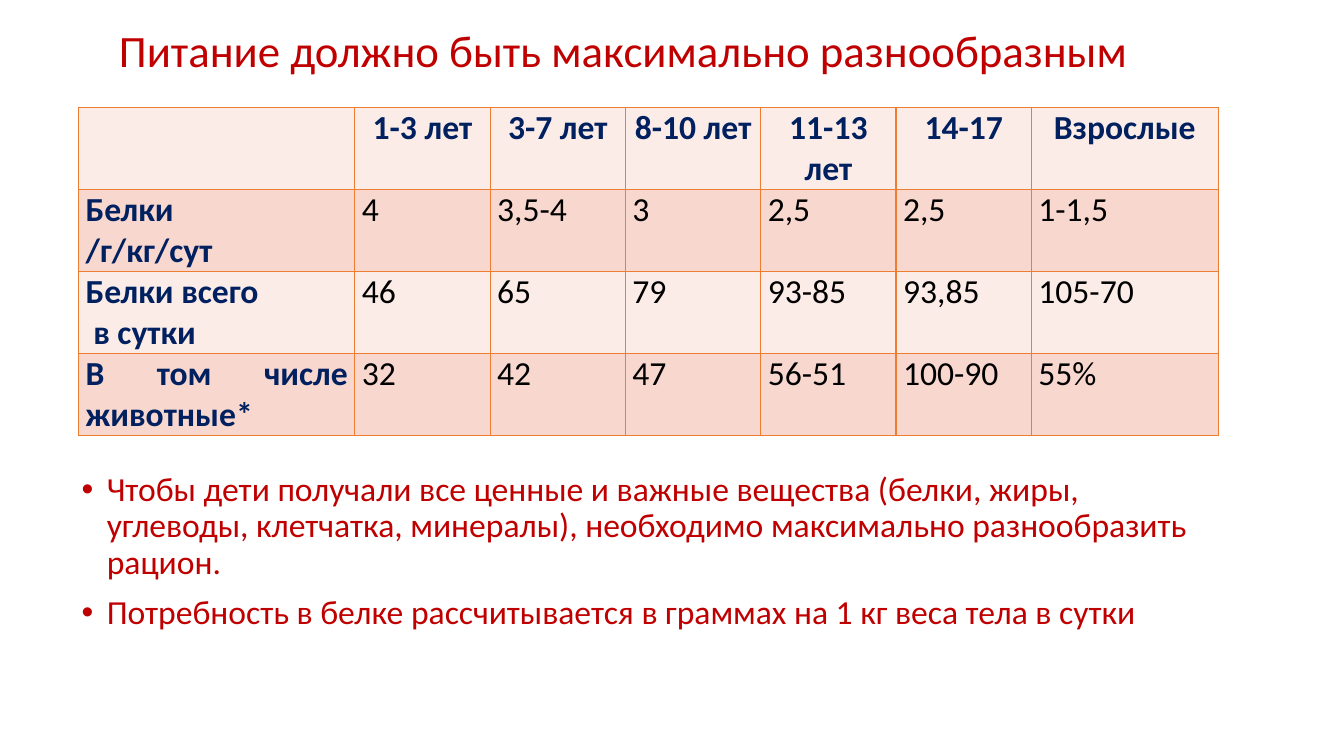
from lxml.etree import SubElement
from pptx import Presentation
from pptx.dml.color import RGBColor
from pptx.enum.text import MSO_ANCHOR as Anchor, MSO_AUTO_SIZE as AutoSize, PP_ALIGN as Align
from pptx.oxml.ns import qn
from pptx.util import Inches, Pt

RED, NAVY, BLACK, ORANGE = "C00000", "002060", "000000", "ED7D31"
BANDS = ("FCECE8", "F8D7CE")

TITLE = "Питание должно быть максимально разнообразным"
PROTEIN_NORMS = [
    ["", "1-3 лет", "3-7 лет", "8-10 лет", "11-13 лет", "14-17", "Взрослые"],
    ["Белки\n/г/кг/сут", "4", "3,5-4", "3", "2,5", "2,5", "1-1,5"],
    ["Белки всего\n в сутки", "46", "65", "79", "93-85", "93,85", "105-70"],
    ["В том числе животные*", "32", "42", "47", "56-51", "100-90", "55%"],
]
ADVICE = [
    "Чтобы дети получали все ценные и важные вещества (белки, жиры, углеводы, "
    "клетчатка, минералы), необходимо максимально разнообразить рацион.",
    "Потребность в белке рассчитывается в граммах на 1 кг веса тела в сутки",
]


def color(hex_text):
    return RGBColor.from_string(hex_text)


class SlideBuilder:
    """Holds the style and the slide; lengths are percent of the slide's size."""

    font_name = "Calibri"
    text_size = 24
    title_size = 32

    def __init__(self, presentation):
        self.width = presentation.slide_width
        self.height = presentation.slide_height
        self.slide = presentation.slides.add_slide(presentation.slide_layouts[5])

    def across(self, percent):
        return int(self.width * percent / 100)

    def down(self, percent):
        return int(self.height * percent / 100)

    def box(self, left, top, width, height):
        return self.across(left), self.down(top), self.across(width), self.down(height)

    def add_run(self, paragraph, text, size, hex_text, bold=False):
        run = paragraph.add_run()
        run.text = text
        run.font.name = self.font_name
        run.font.size = Pt(size)
        run.font.bold = bold
        run.font.color.rgb = color(hex_text)

    def title(self, text, *place):
        shape = self.slide.shapes.title
        shape.left, shape.top, shape.width, shape.height = self.box(*place)
        frame = shape.text_frame
        frame.auto_size = AutoSize.NONE
        frame.vertical_anchor = Anchor.MIDDLE
        paragraph = frame.paragraphs[0]
        paragraph.alignment = Align.LEFT
        paragraph.line_spacing = 0.9
        self.add_run(paragraph, text, self.title_size, RED)

    def bullets(self, texts, *place):
        frame = self.slide.shapes.add_textbox(*self.box(*place)).text_frame
        frame.word_wrap = True
        for index, text in enumerate(texts):
            paragraph = frame.add_paragraph() if index else frame.paragraphs[0]
            paragraph.line_spacing = 0.9
            paragraph.space_before = Pt(10)
            self.add_run(paragraph, text, self.text_size, RED)
            properties = paragraph._p.get_or_add_pPr()
            properties.set("marL", str(Inches(0.25)))
            properties.set("indent", str(Inches(-0.25)))
            SubElement(properties, qn("a:buFont"), typeface="Arial")
            SubElement(properties, qn("a:buChar"), char="•")

    def table(self, rows, left, top, column_widths, row_height):
        place = self.box(left, top, sum(column_widths), row_height * len(rows))
        table = self.slide.shapes.add_table(len(rows), len(column_widths), *place).table
        for column, width in zip(table.columns, column_widths):
            column.width = self.across(width)
        for row_index, texts in enumerate(rows):
            table.rows[row_index].height = self.down(row_height)
            for column_index, text in enumerate(texts):
                cell = table.cell(row_index, column_index)
                is_header = row_index == 0
                self.cell_text(cell, text, is_header, is_header or column_index == 0)
                self.cell_borders(cell)
                cell.fill.solid()
                cell.fill.fore_color.rgb = color(BANDS[row_index % 2])

    def cell_text(self, cell, text, is_header, is_label):
        cell.margin_left = cell.margin_right = Inches(0.07)
        cell.margin_top = cell.margin_bottom = 0
        if not text:
            return
        frame = cell.text_frame
        for index, line in enumerate(text.split("\n")):
            paragraph = frame.add_paragraph() if index else frame.paragraphs[0]
            paragraph.alignment = Align.CENTER if is_header else Align.JUSTIFY
            self.add_run(paragraph, line, self.text_size, NAVY if is_label else BLACK, is_label)

    def cell_borders(self, cell):
        properties = cell._tc.get_or_add_tcPr()
        for side in ("L", "R", "T", "B"):
            line = SubElement(properties, qn(f"a:ln{side}"), w=str(Pt(1)))
            fill = SubElement(line, qn("a:solidFill"))
            SubElement(fill, qn("a:srgbClr"), val=ORANGE)


def main():
    presentation = Presentation()
    presentation.slide_width = Inches(13.33)
    presentation.slide_height = Inches(7.5)
    builder = SlideBuilder(presentation)

    # Heading
    builder.title(TITLE, 8.1, 1.6, 86.27, 10.93)
    # Advice below the table
    builder.bullets(ADVICE, 5.33, 61.87, 85.3, 37.47)
    # Protein norms by age
    builder.table(PROTEIN_NORMS, 5.85, 14.2, [20.55] + [10.07] * 5 + [13.9], 10.84)

    presentation.save("out.pptx")


if __name__ == "__main__":
    main()
